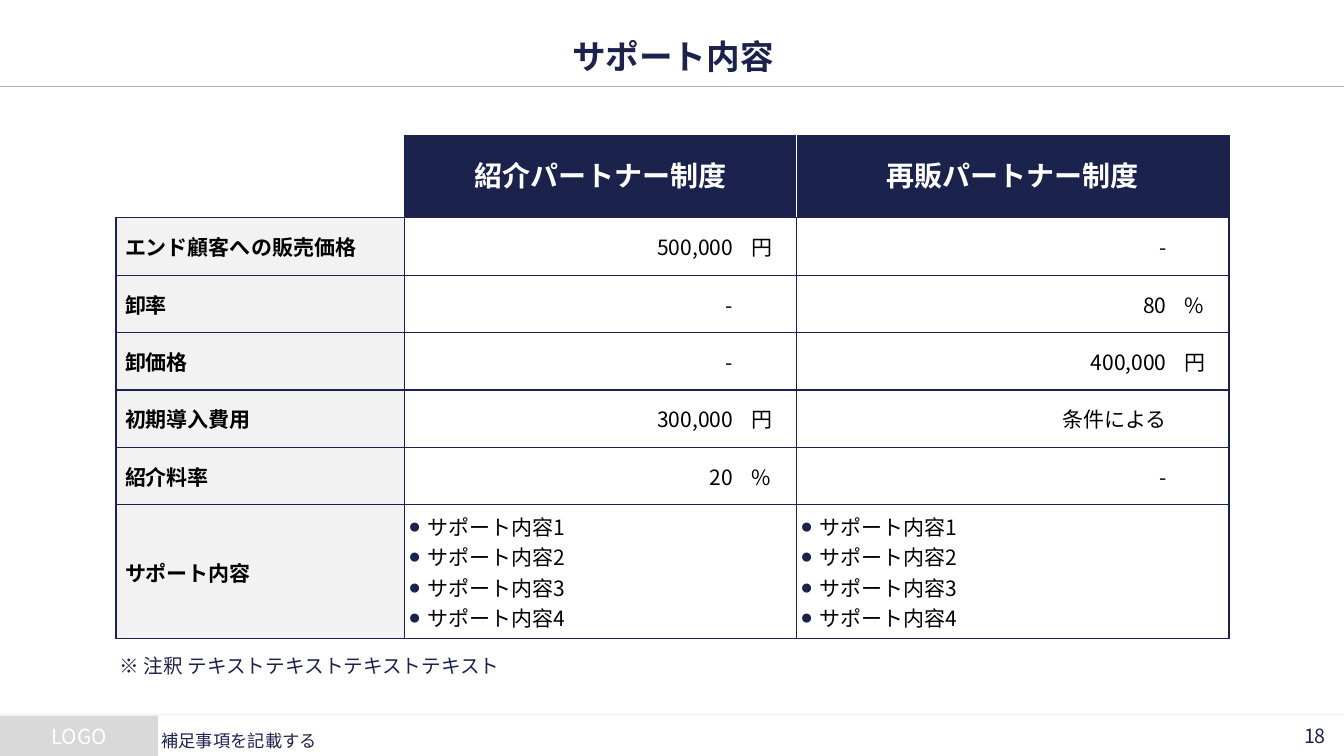
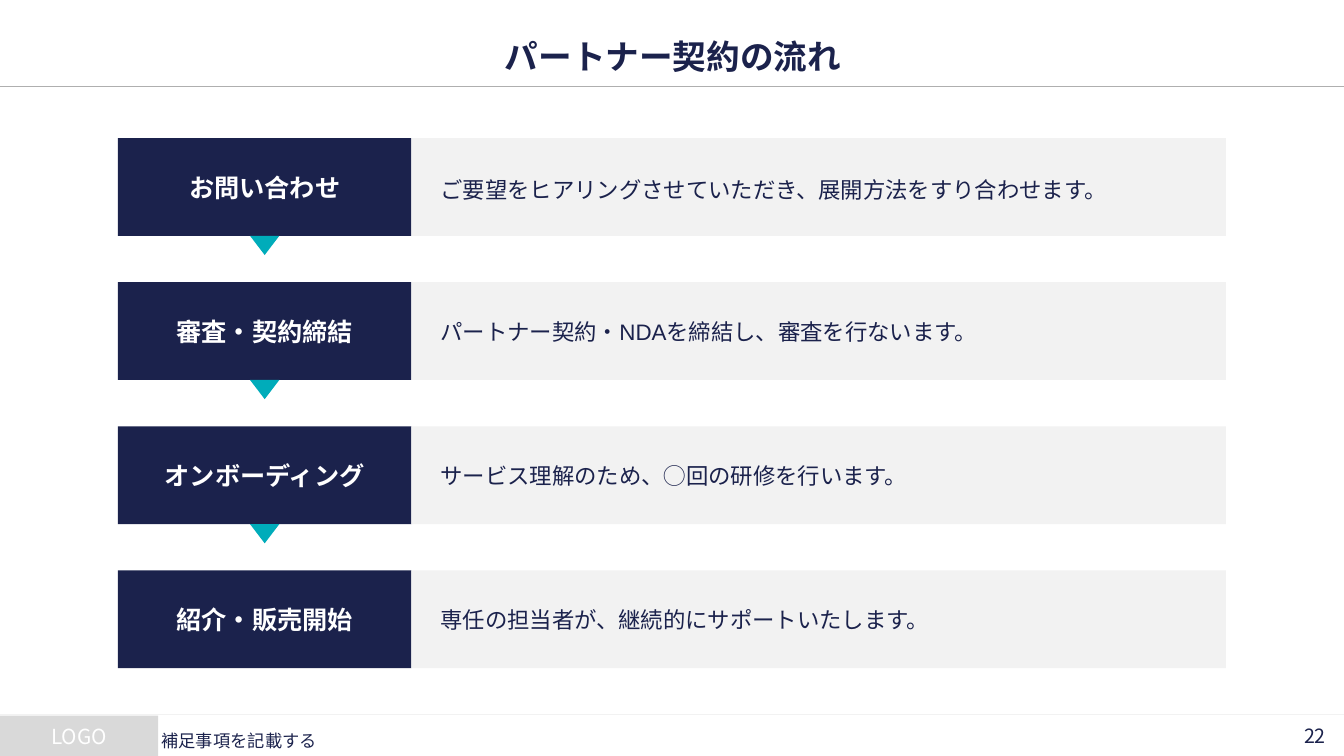
from lxml import etree
from pptx import Presentation
from pptx.dml.color import RGBColor
from pptx.enum.shapes import MSO_CONNECTOR, MSO_SHAPE
from pptx.enum.text import MSO_ANCHOR, PP_ALIGN
from pptx.oxml.ns import qn
from pptx.util import Inches, Pt

NAVY = RGBColor(0x1B, 0x22, 0x4C)
TEAL = RGBColor(0x00, 0xAC, 0xBA)
PALE = RGBColor(0xF2, 0xF2, 0xF2)
SILVER = RGBColor(0xD9, 0xD9, 0xD9)
GRAY = RGBColor(0xAF, 0xAF, 0xAF)
WHITE = RGBColor(0xFF, 0xFF, 0xFF)
BLACK = RGBColor(0x00, 0x00, 0x00)

LEFT, CENTER, RIGHT = PP_ALIGN.LEFT, PP_ALIGN.CENTER, PP_ALIGN.RIGHT
TOP, MIDDLE = MSO_ANCHOR.TOP, MSO_ANCHOR.MIDDLE
RECTANGLE, TRIANGLE = MSO_SHAPE.RECTANGLE, MSO_SHAPE.ISOSCELES_TRIANGLE
STRAIGHT = MSO_CONNECTOR.STRAIGHT

NOTO = "Noto Sans CJK JP"
ARIAL = "Arial"
PLAIN_TABLE = "{2D5ABB26-0587-4C30-8999-92F81FD0307C}"
TITLE_ONLY = 5
WIDTH, HEIGHT = 13.33, 7.5

COLUMNS = [2.86, 3.35, 0.54, 3.76, 0.53]
ROW_HEIGHTS = [0.81] + [0.57] * 5 + [1.33]
PLANS = ["紹介パートナー制度", "再販パートナー制度"]
TERMS = [
    ("エンド顧客への販売価格", "500,000", "円", "-", ""),
    ("卸率", "-", "", "80", "%"),
    ("卸価格", "-", "", "400,000", "円"),
    ("初期導入費用", "300,000", "円", "条件による", ""),
    ("紹介料率", "20", "%", "-", ""),
]
SUPPORTS = [f"サポート内容{number}" for number in range(1, 5)]
STEPS = [
    ("お問い合わせ", "ご要望をヒアリングさせていただき、展開方法をすり合わせます。", 1.2),
    ("審査・契約締結", "パートナー契約・NDAを締結し、審査を行ないます。", 1),
    ("オンボーディング", "サービス理解のため、◯回の研修を行います。", 1),
    ("紹介・販売開始", "専任の担当者が、継続的にサポートいたします。", 1),
]


class Deck:
    def __init__(self):
        self.deck = Presentation()
        self.deck.slide_width = Inches(WIDTH)
        self.deck.slide_height = Inches(HEIGHT)
        self.page = None

    def new_page(self, title, number):
        self.page = self.deck.slides.add_slide(self.deck.slide_layouts[TITLE_ONLY])
        heading = self.page.shapes.title
        self.place(heading, 0.86, 0.34, 11.63, 0.43)
        self.set_text(heading.text_frame, [title], 24, bold=True, align=CENTER)
        self.rule(7.09, PALE)
        self.block(0, 7.1, 1.57, 0.4, SILVER, "LOGO", 14.8, WHITE,
                   align=CENTER, inset=(0.05, 0.05))
        self.rule(0.86, GRAY)
        label = self.label(12.51, 7.1, 0.84, 0.4, str(number), 14, align=RIGHT)
        label.text_frame.margin_right = Inches(0.2)
        self.label(1.56, 7.1, 10.2, 0.4, "補足事項を記載する", 12.3, spacing=1.5)

    def place(self, shape, left, top, width, height):
        shape.left, shape.top = Inches(left), Inches(top)
        shape.width, shape.height = Inches(width), Inches(height)

    def set_text(self, frame, lines, size, color=NAVY, font=NOTO, bold=False, align=LEFT,
                 anchor=MIDDLE, spacing=1, after=0, inset=(0.1, 0.05), bullet=False):
        frame.word_wrap = True
        frame.vertical_anchor = anchor
        frame.margin_left = frame.margin_right = Inches(inset[0])
        frame.margin_top = frame.margin_bottom = Inches(inset[1])
        for index, line in enumerate(lines):
            para = frame.add_paragraph() if index else frame.paragraphs[0]
            self.fill_paragraph(para, line, size, color, font, bold, align, bullet)
            if spacing != 1:
                para.line_spacing = spacing
            if after:
                para.space_after = Pt(after)

    def fill_paragraph(self, para, line, size, color, font, bold, align, bullet):
        para.alignment = align
        if bullet:
            self.add_bullet(para)
        if not line:
            return
        span = para.add_run()
        span.text = line
        span.font.size = Pt(size)
        span.font.bold = bold
        span.font.color.rgb = color
        span.font.name = font
        properties = span.font._element
        etree.SubElement(properties, qn("a:ea")).set("typeface", font)

    def add_bullet(self, para):
        properties = para._p.get_or_add_pPr()
        properties.set("marL", str(Inches(0.19)))
        properties.set("indent", str(-Inches(0.19)))
        tint = etree.SubElement(properties, qn("a:buClr"))
        etree.SubElement(tint, qn("a:srgbClr")).set("val", str(NAVY))
        etree.SubElement(properties, qn("a:buFont")).set("typeface", ARIAL)
        etree.SubElement(properties, qn("a:buChar")).set("char", "●")

    def rule(self, top, color):
        line = self.page.shapes.add_connector(
            STRAIGHT, 0, Inches(top), Inches(WIDTH), Inches(top))
        line.line.color.rgb = color
        line.line.width = Pt(0.75)
        etree.SubElement(line._element.spPr, qn("a:effectLst"))

    def shape(self, kind, left, top, width, height, color):
        shape = self.page.shapes.add_shape(
            kind, Inches(left), Inches(top), Inches(width), Inches(height))
        shape.shadow.inherit = False
        shape.fill.solid()
        shape.fill.fore_color.rgb = color
        shape.line.fill.background()
        return shape

    def block(self, left, top, width, height, fill, text, size, color, **style):
        box = self.shape(RECTANGLE, left, top, width, height, fill)
        self.set_text(box.text_frame, [text], size, color, **style)

    def label(self, left, top, width, height, text, size, **style):
        box = self.page.shapes.add_textbox(
            Inches(left), Inches(top), Inches(width), Inches(height))
        self.set_text(box.text_frame, [text], size, inset=(0.04, 0.04), **style)
        return box

    def pointer(self, left, top):
        self.shape(TRIANGLE, left, top, 0.29, 0.19, TEAL).rotation = 180

    def table(self, left, top, columns, heights):
        frame = self.page.shapes.add_table(
            len(heights), len(columns), Inches(left), Inches(top),
            Inches(sum(columns)), Inches(sum(heights)))
        table = frame.table
        table.first_row = table.horz_banding = False
        table._tbl.tblPr.find(qn("a:tableStyleId")).text = PLAIN_TABLE
        for column, width in zip(table.columns, columns):
            column.width = Inches(width)
        for row, height in zip(table.rows, heights):
            row.height = Inches(height)
        return table

    def cell(self, cell, lines, size=15, fill=None, sides="LRTB", white="",
             color=BLACK, inset=(0.09, 0.13), **style):
        for side in "LRTB":
            self.border(cell, side, side in sides, WHITE if side in white else NAVY)
        if fill is None:
            cell.fill.background()
        else:
            cell.fill.solid()
            cell.fill.fore_color.rgb = fill
        self.set_text(cell.text_frame, lines, size, color, inset=inset, **style)
        cell.vertical_anchor = MIDDLE
        cell.margin_left = cell.margin_right = Inches(inset[0])
        cell.margin_top = cell.margin_bottom = Inches(inset[1])

    def border(self, cell, side, visible, color):
        line = etree.SubElement(cell._tc.get_or_add_tcPr(), qn(f"a:ln{side}"))
        line.set("w", str(Pt(1) if visible else 0))
        if visible:
            paint = etree.SubElement(line, qn("a:solidFill"))
            etree.SubElement(paint, qn("a:srgbClr")).set("val", str(color))
        else:
            etree.SubElement(line, qn("a:noFill"))

    def merged_cell(self, table, row, column, lines, white="", **style):
        first, second = table.cell(row, column), table.cell(row, column + 1)
        first.merge(second)
        self.cell(first, lines, white=white, **style)
        self.cell(second, [""], sides="RTB", white=white, fill=style.get("fill"))


def build_support(deck):
    deck.new_page("サポート内容", 18)
    deck.label(1.15, 6.45, 11.04, 0.32, "※ 注釈 テキストテキストテキストテキスト", 14,
               anchor=TOP, after=4)
    table = deck.table(1.15, 1.35, COLUMNS, ROW_HEIGHTS)
    deck.cell(table.cell(0, 0), [""], sides="RB")
    last = len(ROW_HEIGHTS) - 1
    for index, (plan, white) in enumerate(zip(PLANS, "RL")):
        column = 1 + 2 * index
        deck.merged_cell(table, 0, column, [plan], size=20, fill=NAVY, color=WHITE,
                         font=ARIAL, bold=True, align=CENTER, white=white, inset=(0.04, 0))
        deck.merged_cell(table, last, column, SUPPORTS, bullet=True, inset=(0.04, 0.05))
    for row, (name, *values) in enumerate(TERMS, 1):
        deck.cell(table.cell(row, 0), [name], fill=PALE, bold=True)
        for column, value in enumerate(values, 1):
            is_amount = column % 2 == 1
            deck.cell(table.cell(row, column), [value],
                      sides="LTB" if is_amount else "RTB",
                      align=RIGHT if is_amount else LEFT)
    deck.cell(table.cell(last, 0), ["サポート内容"], fill=PALE, bold=True)


def build_flow(deck):
    deck.new_page("パートナー契約の流れ", 22)
    left, width, height, pitch = 1.17, 2.91, 0.97, 1.43
    for index, (name, detail, spacing) in enumerate(STEPS):
        top = 1.37 + index * pitch
        deck.block(left, top, width, height, NAVY, name, 18, WHITE,
                   bold=True, align=CENTER, inset=(0.15, 0.15))
        deck.block(left + width, top, 8.08, height, PALE, detail, 16, NAVY,
                   font=ARIAL, spacing=spacing, inset=(0.29, 0.05))
        if index < len(STEPS) - 1:
            deck.pointer(left + (width - 0.29) / 2, top + height)


def main():
    deck = Deck()
    build_support(deck)
    build_flow(deck)
    deck.deck.save("out.pptx")


if __name__ == "__main__":
    main()
